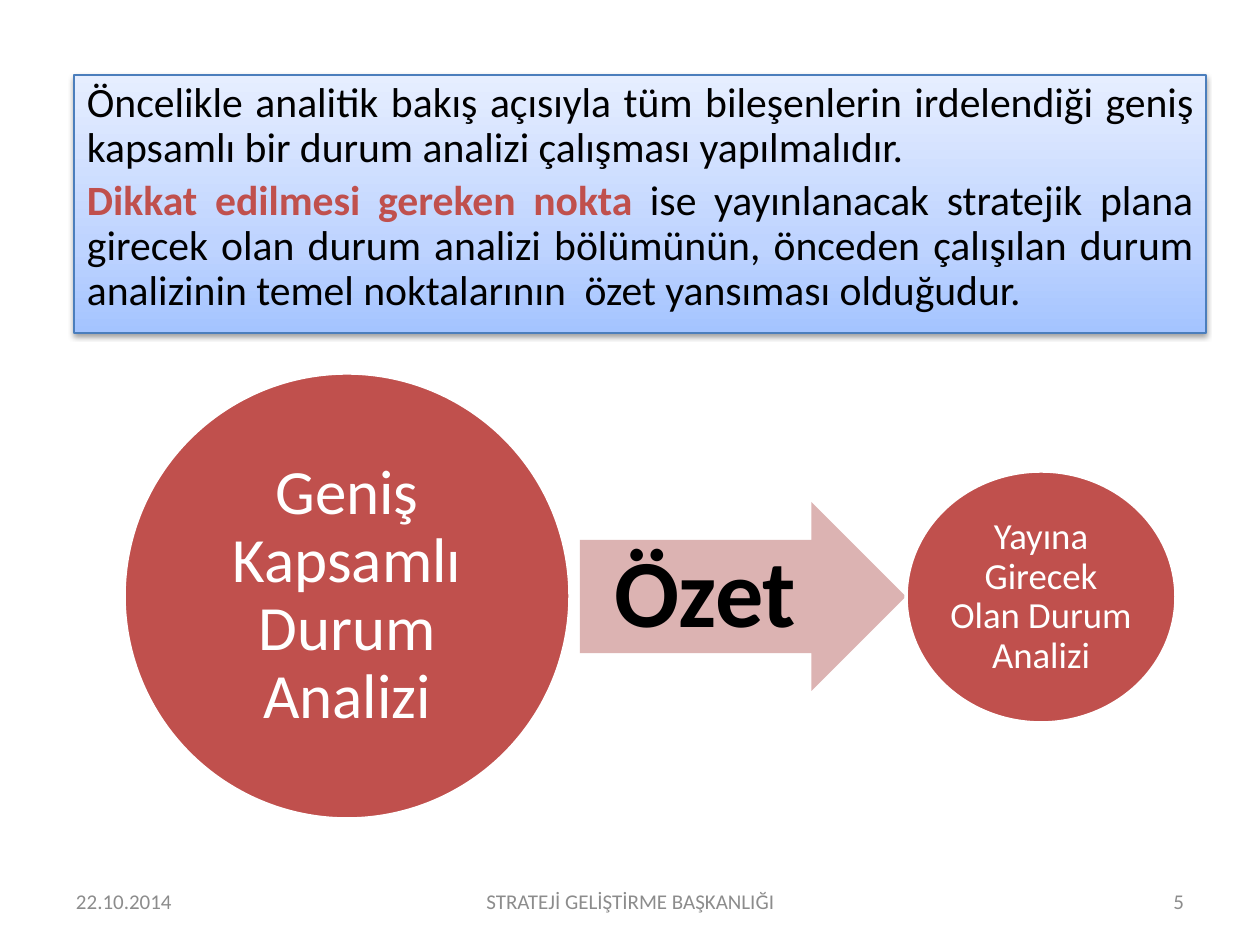
from copy import deepcopy
from dataclasses import dataclass

from lxml.etree import SubElement
from pptx import Presentation
from pptx.dml.color import RGBColor
from pptx.enum.shapes import MSO_SHAPE as Form
from pptx.enum.text import MSO_ANCHOR as Anchor, PP_ALIGN as Align
from pptx.oxml.ns import qn
from pptx.util import Emu, Pt


@dataclass(frozen=True)
class Theme:
    face: str = "Calibri"
    red: str = "C0504D"
    rose: str = "DCB3B2"
    white: str = "FFFFFF"
    black: str = "000000"
    grey: str = "8C8C8C"
    edge: str = "4B7EBC"
    blues: tuple = ((0, "A4C4FF"), (0.35, "BFD4FF"), (1, "E6EEFF"))
    foot: float = 12
    body: float = 23.8
    large: float = 36
    huge: float = 55
    small: float = 21


def px(count):
    return Emu(round(count * 914400 / 126))


def color(code):
    return RGBColor.from_string(code)


class Deck:
    def __init__(self, theme):
        self.theme = theme
        self.file = Presentation()
        self.file.slide_width, self.file.slide_height = px(1260), px(945)
        self.slide = self.file.slides.add_slide(self.file.slide_layouts[6])

    def style(self, para, size, ink, align, bold=False):
        font = para.font
        font.name, font.size, font.bold = self.theme.face, Pt(size), bold
        font.color.rgb = color(ink)
        para.alignment = align

    def frame(self, item, pads, anchor=Anchor.MIDDLE):
        frame = item.text_frame
        frame.word_wrap = True
        frame.vertical_anchor = anchor
        (frame.margin_left, frame.margin_top,
         frame.margin_right, frame.margin_bottom) = map(px, pads)
        return frame

    def shape(self, form, box, fill=None, edge=None, width=0):
        item = self.slide.shapes.add_shape(form, *map(px, box))
        item.shadow.inherit = False
        if fill:
            item.fill.solid()
            item.fill.fore_color.rgb = color(fill)
        if edge:
            item.line.color.rgb = color(edge)
            item.line.width = Pt(width)
        else:
            item.line.fill.background()
        return item

    def label(self, item, text, size, ink, pads, bold=False):
        para = self.frame(item, pads).paragraphs[0]
        para.text = text
        para.line_spacing = 0.9
        self.style(para, size, ink, Align.CENTER, bold)

    def circle(self, box, text, size, pad):
        item = self.shape(Form.OVAL, box, self.theme.red, self.theme.white, 2)
        self.label(item, text, size, self.theme.white, [pad] * 4)

    def arrow(self, box, text):
        item = self.shape(Form.RIGHT_ARROW, box, self.theme.rose)
        item.adjustments[0], item.adjustments[1] = 0.6, 0.5
        self.label(item, text, self.theme.huge, self.theme.black,
                   (0, 0, 19, 0), True)

    def shade(self, item):
        fill = item.fill
        fill.gradient()
        fill.gradient_angle = 90
        stops = item._element.spPr.find(qn("a:gradFill")).find(qn("a:gsLst"))
        stops.insert(1, deepcopy(stops[0]))
        for stop, (place, code) in zip(fill.gradient_stops, self.theme.blues):
            stop.position = place
            stop.color.rgb = color(code)

    def shadow(self, item):
        effects = item._element.spPr.find(qn("a:effectLst"))
        outer = SubElement(effects, qn("a:outerShdw"), blurRad=str(Pt(3.1)),
                           dist=str(Pt(1.6)), dir="5400000", rotWithShape="0")
        tone = SubElement(outer, qn("a:srgbClr"), val=self.theme.black)
        SubElement(tone, qn("a:alpha"), val="38000")

    def panel(self, box, paras):
        item = self.shape(Form.RECTANGLE, box, edge=self.theme.edge, width=0.75)
        self.shade(item)
        self.shadow(item)
        frame = self.frame(item, (13, 6, 13, 6), Anchor.TOP)
        for index, (lead, text) in enumerate(paras):
            para = frame.add_paragraph() if index else frame.paragraphs[0]
            para.line_spacing, para.space_before = 0.9, Pt(5)
            self.style(para, self.theme.body, self.theme.black, Align.JUSTIFY)
            if lead:
                run = para.add_run()
                run.text, run.font.bold = lead, True
                run.font.color.rgb = color(self.theme.red)
            para.add_run().text = text

    def footer(self, box, text, align):
        item = self.slide.shapes.add_textbox(*map(px, box))
        para = self.frame(item, (13, 6, 13, 6)).paragraphs[0]
        para.text = text
        self.style(para, self.theme.foot, self.theme.grey, align)


def main():
    theme = Theme()
    deck = Deck(theme)
    for left, width, text, align in (
        (63, 294, "22.10.2014", Align.LEFT),
        (431, 399, "STRATEJİ GELİŞTİRME BAŞKANLIĞI", Align.CENTER),
        (903, 294, "5", Align.RIGHT),
    ):
        deck.footer((left, 876, width, 50), text, align)
    deck.panel((74, 75, 1132, 258), (
        ("", "Öncelikle analitik bakış açısıyla tüm bileşenlerin irdelendiği "
             "geniş kapsamlı bir durum analizi çalışması yapılmalıdır."),
        ("Dikkat edilmesi gereken nokta",
         " ise yayınlanacak stratejik plana girecek olan durum analizi "
         "bölümünün, önceden çalışılan durum analizinin temel noktalarının  "
         "özet yansıması olduğudur."),
    ))
    deck.circle((124, 373, 446, 446), "Geniş Kapsamlı Durum Analizi",
                theme.large, 6)
    deck.arrow((580, 502, 326, 189), "Özet")
    deck.circle((906, 471, 270, 252), "Yayına Girecek Olan Durum Analizi",
                theme.small, 4)
    deck.file.save("out.pptx")


if __name__ == "__main__":
    main()
